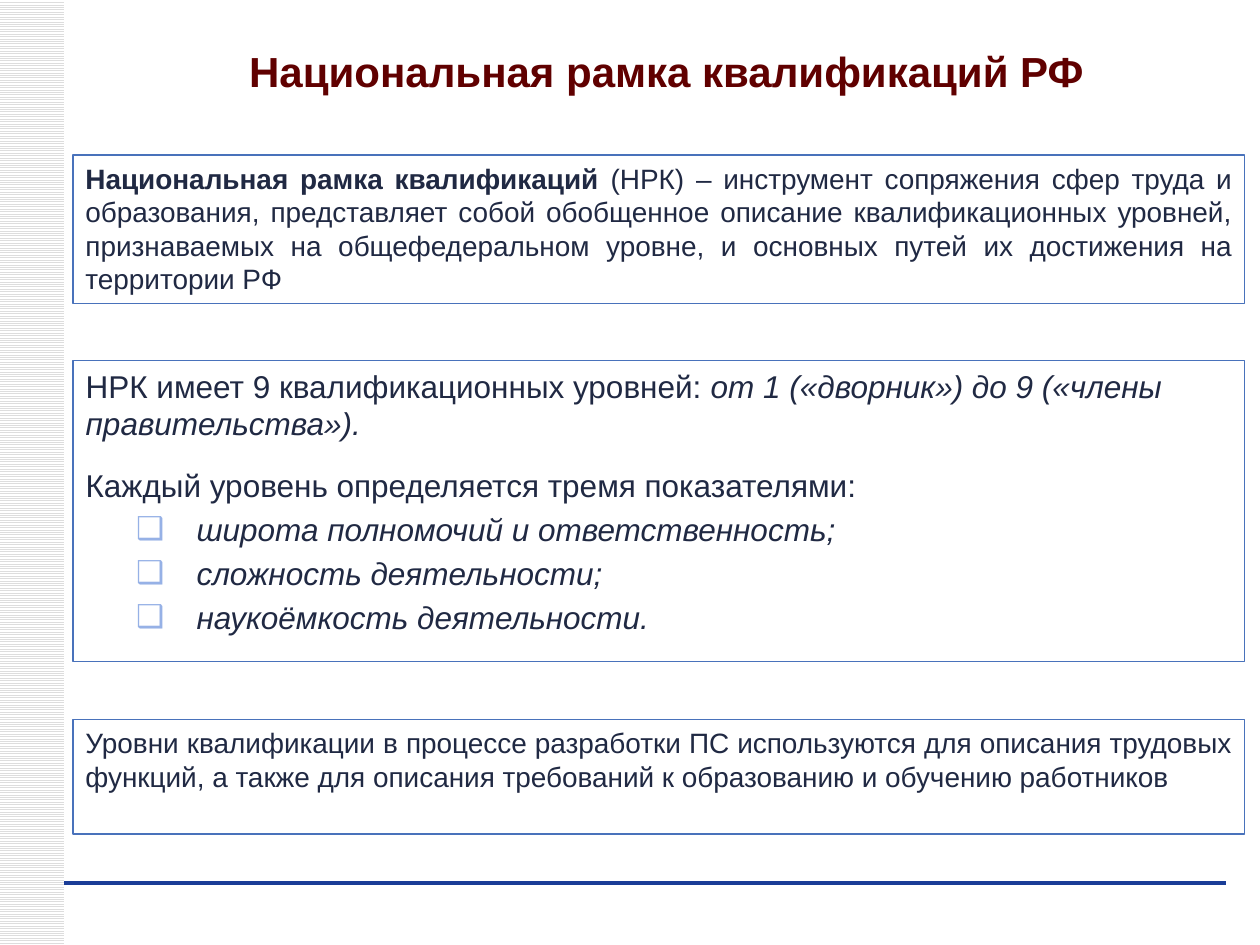
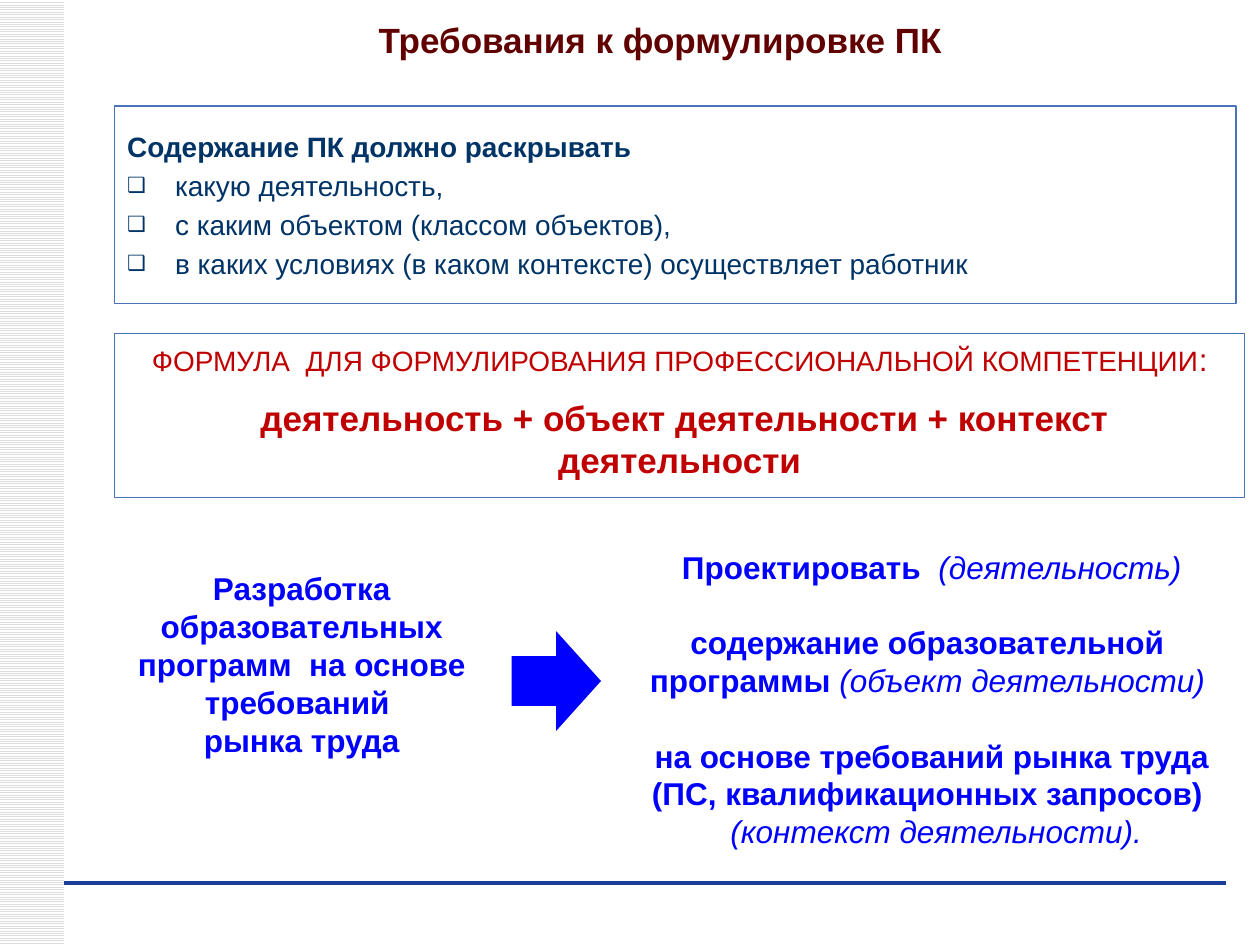
from lxml.etree import SubElement
from pptx import Presentation
from pptx.dml.color import RGBColor
from pptx.enum.dml import MSO_PATTERN
from pptx.enum.shapes import MSO_CONNECTOR, MSO_SHAPE
from pptx.enum.text import MSO_ANCHOR, MSO_AUTO_SIZE, PP_ALIGN
from pptx.oxml.ns import qn
from pptx.util import Inches, Pt

FONT = "Arial"
WHITE = RGBColor(0xFF, 0xFF, 0xFF)
STRIPE = RGBColor(0xDD, 0xDD, 0xDD)
RULE = RGBColor(0x1A, 0x3D, 0x97)
FRAME = RGBColor(0x49, 0x72, 0xBB)
MAROON = RGBColor(0x60, 0x00, 0x00)
INK = RGBColor(0x20, 0x29, 0x43)
NAVY = RGBColor(0x00, 0x33, 0x66)
RED = RGBColor(0xC0, 0x00, 0x00)
BLUE = RGBColor(0x00, 0x00, 0xFF)
PALE_BLUE = RGBColor(0x96, 0xB1, 0xE6)

LEFT, CENTER, JUSTIFY = PP_ALIGN.LEFT, PP_ALIGN.CENTER, PP_ALIGN.JUSTIFY
BOLD, ITALIC = {"bold": True}, {"italic": True}
BLANK_LINE = 21.5  # height of one 18 pt line

# A paragraph is (runs, format); a run is (text, font settings).
LEVEL_BULLET = dict(before=3.6, indent=(0.88, -0.48), bullet=(PALE_BLUE, 100))
CONTENT_BULLET = dict(before=3.2, indent=(0.38, -0.38), bullet=(NAVY, 75))

FRAMEWORK = {
    "title": ("Национальная рамка квалификаций РФ", 24, (0.98, 0.29, 8.62, 0.54)),
    "body": dict(
        at=(0.58, 2.86, 9.3, 2.39), size=18, color=INK, framed=True,
        paragraphs=[
            ([("НРК имеет 9 квалификационных уровней: ", {}),
              ("от 1 («дворник») до 9 («члены правительства»).", ITALIC)], {}),
            ([("Каждый уровень определяется тремя показателями:", {})], {"before": 13.4}),
        ] + [([(text, ITALIC)], LEVEL_BULLET) for text in (
            "широта полномочий и ответственность;",
            "сложность деятельности;",
            "наукоёмкость деятельности.")]),
    "boxes": [
        dict(at=(0.58, 1.23, 9.3, 1.18), size=16, color=INK, framed=True, align=JUSTIFY,
             paragraphs=[([
                 ("Национальная рамка квалификаций ", BOLD),
                 ("(НРК) – инструмент сопряжения сфер труда и образования, представляет "
                  "собой обобщенное описание квалификационных уровней, признаваемых на "
                  "общефедеральном уровне, и основных путей их достижения на территории РФ",
                  {})], {})]),
        dict(at=(0.58, 5.71, 9.3, 0.91), size=16, color=INK, framed=True, align=JUSTIFY,
             paragraphs=[([
                 ("Уровни квалификации в процессе разработки ПС используются для описания "
                  "трудовых функций, а также для описания требований к образованию и "
                  "обучению работников", {})], {})]),
    ],
}

COMPETENCE = {
    "title": ("Требования к формулировке ПК", 20, (0.48, 0.09, 9.52, 0.44)),
    "body": dict(
        at=(0.91, 0.84, 8.9, 1.57), size=16, color=NAVY, framed=True, align=JUSTIFY,
        anchor=MSO_ANCHOR.MIDDLE,
        paragraphs=[([("Содержание ПК должно раскрывать", BOLD)], {})]
        + [([(text, {})], CONTENT_BULLET) for text in (
            "какую деятельность, ",
            "с каким объектом (классом объектов), ",
            "в каких условиях (в каком контексте) осуществляет работник")]),
    "boxes": [
        dict(at=(0.91, 2.65, 8.97, 1.3), size=16, color=RED, framed=True, align=CENTER,
             paragraphs=[
                 ([("ФОРМУЛА  ДЛЯ ФОРМУЛИРОВАНИЯ ПРОФЕССИОНАЛЬНОЙ КОМПЕТЕНЦИИ", {}),
                   (":", {"size": Pt(18)})], {}),
                 ([(" деятельность + объект деятельности + контекст деятельности",
                    {"size": Pt(20), "bold": True})], {"before": 10.75})]),
        dict(at=(4.92, 4.3, 4.95, 2.52), size=18, color=BLUE, align=CENTER,
             paragraphs=[
                 ([("Проектировать  ", BOLD), ("(деятельность)", ITALIC)], {}),
                 ([("содержание образовательной  программы ", BOLD),
                   ("(объект деятельности) ", ITALIC)], {"before": BLANK_LINE}),
                 ([("на основе требований рынка труда (ПС, квалификационных запросов) ",
                    BOLD)], {"before": BLANK_LINE}),
                 ([(" ", BOLD), ("(контекст деятельности).", ITALIC)], {})]),
        dict(at=(0.91, 4.47, 2.97, 1.62), size=18, color=BLUE, align=CENTER,
             paragraphs=[
                 ([("Разработка образовательных программ  на основе требований ", BOLD)], {}),
                 ([("рынка труда", BOLD)], {})]),
    ],
    "arrow": (4.06, 5.01, 0.71, 0.79),
}


def inches(at):
    return [Inches(v) for v in at]


def place(sp, at):
    sp.left, sp.top, sp.width, sp.height = inches(at)


def set_bullet(p, indent=(0, 0), bullet=None):
    """Set the hanging indent, and the bullet as (colour, percent of text size)."""
    pPr = p._p.get_or_add_pPr()
    for name, value in zip(("marL", "indent"), indent):
        pPr.set(name, str(Inches(value)))
    if bullet is None:
        SubElement(pPr, qn("a:buNone"))
        return
    color, percent = bullet
    SubElement(SubElement(pPr, qn("a:buClr")), qn("a:srgbClr")).set("val", str(color))
    SubElement(pPr, qn("a:buSzPct")).set("val", str(percent * 1000))
    SubElement(pPr, qn("a:buFont")).set("typeface", FONT)
    SubElement(pPr, qn("a:buChar")).set("char", "❑")


def write(sp, paragraphs, size, color, align=LEFT, anchor=MSO_ANCHOR.TOP):
    tf = sp.text_frame
    frame_format = {"word_wrap": True, "auto_size": MSO_AUTO_SIZE.NONE,
                    "vertical_anchor": anchor}
    for name, value in frame_format.items():
        setattr(tf, name, value)
    for i, (runs, fmt) in enumerate(paragraphs):
        p = tf.add_paragraph() if i else tf.paragraphs[0]
        p.alignment = align
        p.space_before = Pt(fmt.get("before", 0))
        set_bullet(p, fmt.get("indent", (0, 0)), fmt.get("bullet"))
        for text, style in runs:
            r = p.add_run()
            r.text = text
            r.font.color.rgb = color
            font = {"name": FONT, "size": Pt(size), "bold": False, "italic": False}
            for name, value in {**font, **style}.items():
                setattr(r.font, name, value)


def fill_box(sp, at, framed=False, **text):
    place(sp, at)
    if framed:
        sp.line.color.rgb = FRAME
        sp.line.width = Pt(0.75)
    write(sp, **text)


def add_backdrop(s):
    """Striped band on the left and thin rule at the bottom."""
    band = s.shapes.add_shape(MSO_SHAPE.RECTANGLE, *inches((0, 0, 0.51, 7.5)))
    band.shadow.inherit = False
    band.line.fill.background()
    band.fill.patterned()
    band.fill.pattern = MSO_PATTERN.LIGHT_HORIZONTAL
    band.fill.fore_color.rgb = STRIPE
    band.fill.back_color.rgb = WHITE
    rule = s.shapes.add_connector(MSO_CONNECTOR.STRAIGHT, *inches((0.51, 7.01, 9.73, 7.01)))
    rule.line.color.rgb = RULE
    rule.line.width = Pt(0)
    SubElement(rule._element.spPr, qn("a:effectLst"))


def add_arrow(s, at):
    arrow = s.shapes.add_shape(MSO_SHAPE.RIGHT_ARROW, *inches(at))
    arrow.shadow.inherit = False
    arrow.fill.solid()
    arrow.fill.fore_color.rgb = BLUE
    arrow.line.fill.background()


def build_slide(prs, content):
    s = prs.slides.add_slide(prs.slide_layouts[1])
    add_backdrop(s)
    title, size, at = content["title"]
    fill_box(s.shapes.title, at, paragraphs=[([(title, BOLD)], {})], size=size,
             color=MAROON, align=CENTER, anchor=MSO_ANCHOR.MIDDLE)
    fill_box(s.placeholders[1], **content["body"])
    for box in content["boxes"]:
        fill_box(s.shapes.add_textbox(*inches(box["at"])), **box)
    if "arrow" in content:
        add_arrow(s, content["arrow"])


def main():
    prs = Presentation()
    prs.slide_width, prs.slide_height = Inches(10), Inches(7.5)
    for content in (FRAMEWORK, COMPETENCE):
        build_slide(prs, content)
    prs.save("out.pptx")


if __name__ == "__main__":
    main()
